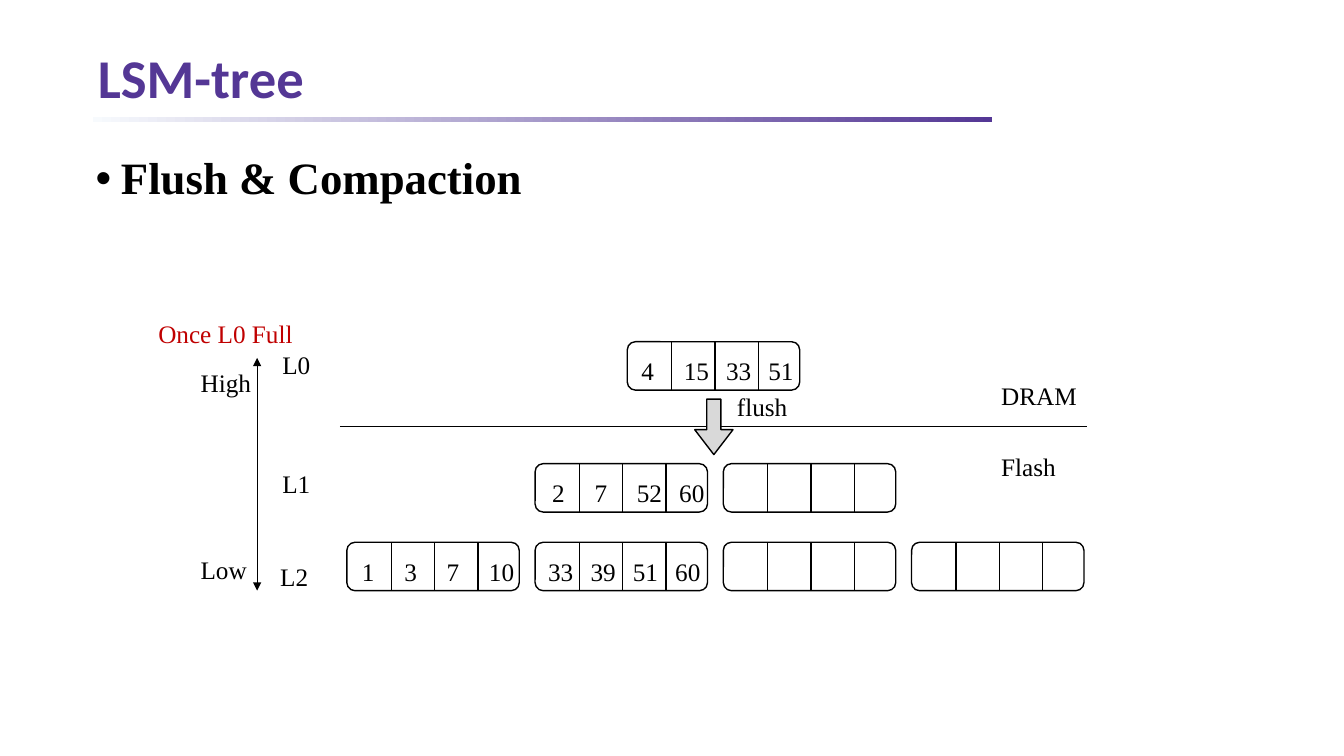
from pptx import Presentation
from pptx.util import Inches, Pt
from pptx.dml.color import RGBColor
from pptx.enum.shapes import MSO_SHAPE as Shape, MSO_CONNECTOR as Link
from pptx.enum.text import MSO_ANCHOR as Anchor
from pptx.oxml.ns import qn
from lxml.etree import SubElement as Sub

WIDE, HIGH = 13.33, 7.5
INK, PLUM, RED = "000000", "543795", "C00000"
SERIF = "Times New Roman"

LEFT, STEP = 3.44, 1.867
BOX_W, BOX_H = 1.71, 0.48
CELL, GAP = 0.43, 0.42
ROWS = {"L0": 3.39, "L1": 4.6, "L2": 5.38}
BLOCKS = [
    ("L0", 1.49, 0.09, [4, 15, 33, 51]),
    ("L1", 2, 0, []),
    ("L1", 1, 0.12, [2, 7, 52, 60]),
    ("L2", 0, 0.1, [1, 3, 7, 10]),
    ("L2", 2, 0, []),
    ("L2", 3, 0, []),
    ("L2", 1, 0.08, [33, 39, 51, 60]),
]
LABELS = [
    ("DRAM", 9.88, 3.72, 1.04, INK),
    ("Flash", 9.88, 4.43, 0.85, INK),
    ("L0", 2.75, 3.42, 0.63, INK),
    ("L1", 2.75, 4.6, 0.63, INK),
    ("L2", 2.73, 5.52, 0.63, INK),
    ("flush", 7.26, 3.83, 0.66, INK),
    ("High", 1.94, 3.59, 0.63, INK),
    ("Low", 1.94, 5.45, 0.63, INK),
    ("Once L0 Full", 1.52, 3.11, 3.31, RED),
]

deck = Presentation()
deck.slide_width, deck.slide_height = Inches(WIDE), Inches(HIGH)
slide = deck.slides.add_slide(deck.slide_layouts[6])


def color(code):
    return RGBColor.from_string(code)


def text(words, x, y, w, h=0.38, size=18, font=SERIF, ink=INK, bold=False,
         anchor=Anchor.TOP, lead=None, bullet=None):
    box = slide.shapes.add_textbox(*map(Inches, (x, y, w, h)))
    frame = box.text_frame
    frame.word_wrap = True
    frame.vertical_anchor = anchor
    frame.margin_left = frame.margin_right = Inches(0.05)
    frame.margin_top = frame.margin_bottom = Inches(0.05)
    para = frame.paragraphs[0]
    if lead:
        para.line_spacing = lead
    if bullet:
        props = para._p.get_or_add_pPr()
        props.set("marL", str(Inches(0.25)))
        props.set("indent", str(-Inches(0.25)))
        Sub(props, qn("a:buFont")).set("typeface", "Arial")
        Sub(props, qn("a:buChar")).set("char", bullet)
    run = para.add_run()
    run.text = words
    run.font.size, run.font.name, run.font.bold = Pt(size), font, bold
    run.font.color.rgb = color(ink)


def shape(kind, x, y, w, h, fill):
    item = slide.shapes.add_shape(kind, *map(Inches, (x, y, w, h)))
    item.shadow.inherit = False
    item.fill.solid()
    item.fill.fore_color.rgb = color(fill)
    item.line.color.rgb = color(INK)
    item.line.width = Pt(1)
    return item


def line(x1, y1, x2, y2, width, heads=False):
    item = slide.shapes.add_connector(Link.STRAIGHT, *map(Inches, (x1, y1, x2, y2)))
    item.line.color.rgb = color(INK)
    item.line.width = Pt(width)
    if heads:
        for tag in ("a:headEnd", "a:tailEnd"):
            Sub(item.line._get_or_add_ln(), qn(tag)).set("type", "triangle")
    Sub(item._element.spPr, qn("a:effectLst"))


def block(level, col, inset, keys):
    x, y = LEFT + col * STEP, ROWS[level]
    shape(Shape.ROUNDED_RECTANGLE, x, y, BOX_W, BOX_H, "FFFFFF").adjustments[0] = 0.167
    for i in (1, 2, 3):
        cut = x + 0.01 + i * CELL
        line(cut, y, cut, y + BOX_H, 1)
    for i, key in enumerate(keys):
        text(str(key), x + inset + i * GAP, y + 0.09, 0.5)


rule = shape(Shape.RECTANGLE, 0.92, 1.16, 8.92, 0.05, PLUM)
rule.line.fill.background()
rule.fill.gradient()
rule.fill.gradient_angle = 0
for stop, code in zip(rule.fill.gradient_stops, ("F7FAFD", PLUM)):
    stop.color.rgb = color(code)

text("LSM-tree", 0.92, 0.43, 11.5, 0.75, size=39, font="Calibri", ink=PLUM,
     bold=True, anchor=Anchor.MIDDLE, lead=0.9)
for part in BLOCKS:
    block(*part)
line(3.37, 4.23, 10.78, 4.23, 0.75)
line(2.55, 3.55, 2.55, 5.86, 0.75, heads=True)
arrow = shape(Shape.DOWN_ARROW, 6.89, 3.96, 0.38, 0.55, "D9D9D9")
arrow.adjustments[0], arrow.adjustments[1] = 0.37, 0.65
for words, x, y, w, ink in LABELS:
    text(words, x, y, w, ink=ink)
text("Flush & Compaction", 0.9, 1.5, 8.97, 1.1, size=32, bold=True, lead=0.9, bullet="•")

deck.save("out.pptx")
